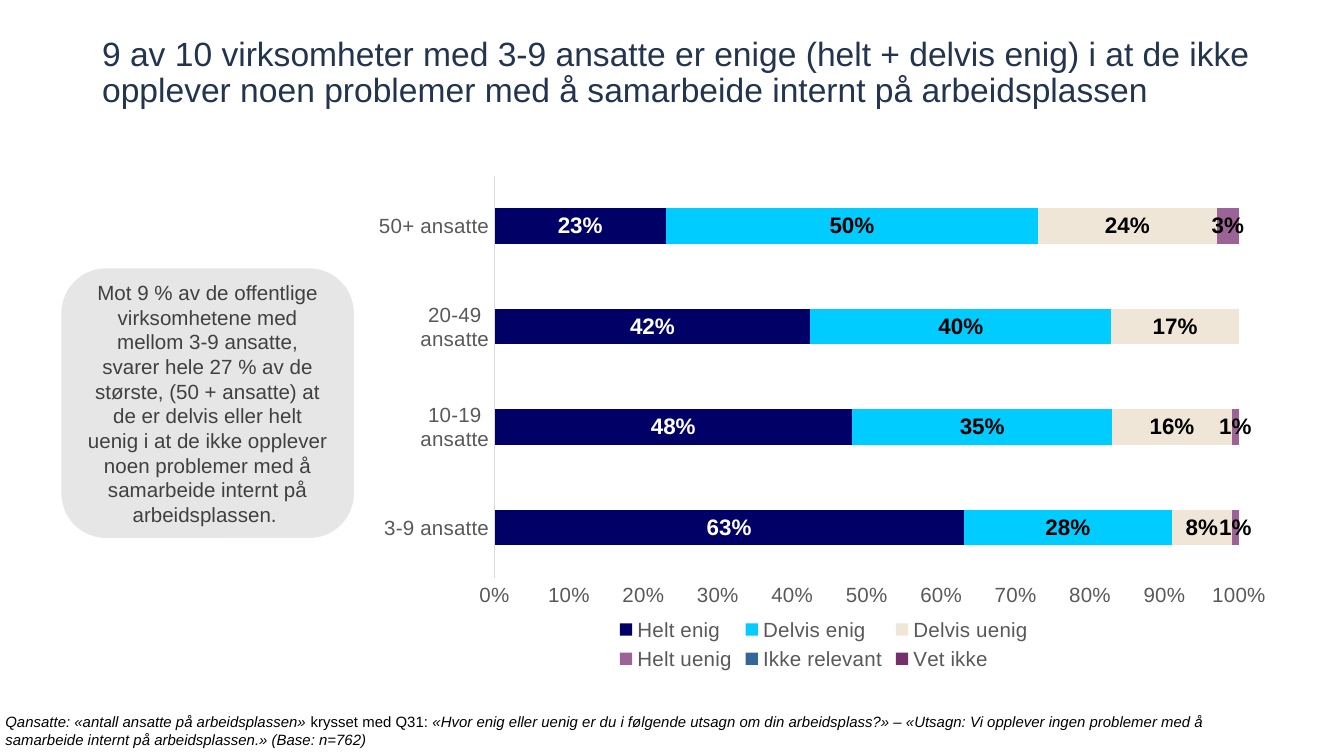
import pptx
import pptx.chart.data
import pptx.dml.color
import pptx.enum.chart
import pptx.enum.shapes
import pptx.enum.text
import pptx.oxml
import pptx.oxml.ns
import pptx.util

Inches = pptx.util.Inches
Pt = pptx.util.Pt
FONT = "Arial"
COLORS = {
    "title": "23344F", "black": "000000", "white": "FFFFFF", "callout": "E7E6E6",
    "callout_text": "404040", "axis_text": "595959", "axis_line": "D9D9D9",
}

TITLE = ("9 av 10 virksomheter med 3-9 ansatte er enige (helt + delvis enig) i at de ikke "
         "opplever noen problemer med å samarbeide internt på arbeidsplassen")
CALLOUT = ("Mot 9 % av de offentlige virksomhetene med mellom 3-9 ansatte, svarer hele 27 % av de "
           "største, (50 + ansatte) at de er delvis eller helt uenig i at de ikke opplever noen "
           "problemer med å samarbeide internt på arbeidsplassen. ")
# (text, italic)
SOURCE_NOTE = [
    ("Qansatte: «antall ansatte på arbeidsplassen» ", True),
    ("krysset med Q31: ", False),
    ("«Hvor enig eller uenig er du i følgende utsagn om din arbeidsplass?» – «Utsagn: Vi opplever "
     "ingen problemer med å samarbeide internt på arbeidsplassen.» (Base: n=762)", True),
]
COMPANY_SIZES = ["3-9 ansatte", "10-19 ansatte", "20-49 ansatte", "50+ ansatte"]
# (name, shares, fill, label colour or None for no labels)
ANSWERS = [
    ("Helt enig", [0.63, 0.48, 0.42, 0.23], "000066", "white"),
    ("Delvis enig", [0.28, 0.35, 0.40, 0.50], "00CCFF", "black"),
    ("Delvis uenig", [0.08, 0.16, 0.17, 0.24], "F0E6D8", "black"),
    ("Helt uenig", [0.01, 0.01, 0, 0.03], "9B6396", "black"),
    ("Ikke relevant", [0, 0, 0, 0], "336699", None),
    ("Vet ikke", [0, 0, 0, 0], "743068", None),
]
# Left, top, width and height in inches; the plot area is measured inside the chart.
CHART_BOX = (2.74, 0.88, 6.78, 4.15)
PLOT_BOX = (0.94, 0.43, 5.54, 2.99)


def rgb(value):
    return pptx.dml.color.RGBColor.from_string(value)


def format_font(font, size, color, bold=False, italic=False):
    font.name = FONT
    font.size = Pt(size)
    font.bold = bold
    font.italic = italic
    font.color.rgb = rgb(COLORS[color])


def write_text(frame, spans, size, color, anchor="TOP", align="LEFT", spacing=None, inset=None):
    """Fill a text frame with one paragraph of (text, italic) spans."""
    frame.word_wrap = True
    frame.vertical_anchor = getattr(pptx.enum.text.MSO_ANCHOR, anchor)
    if inset is not None:
        frame.margin_left = frame.margin_right = Inches(inset)
        frame.margin_top = frame.margin_bottom = Inches(inset)
    para = frame.paragraphs[0]
    para.alignment = getattr(pptx.enum.text.PP_ALIGN, align)
    para.line_spacing = spacing
    for text, italic in spans:
        span = para.add_run()
        span.text = text
        format_font(span.font, size, color, italic=italic)


def chart_xml(body):
    return pptx.oxml.parse_xml(body.replace(">", f" {pptx.oxml.ns.nsdecls('c')}>", 1))


def place_plot_area(chart):
    area = chart.plots[0]._element.getparent()
    for old in area.findall(pptx.oxml.ns.qn("c:layout")):
        area.remove(old)
    modes = "".join(f'<c:{side}Mode val="edge"/>' for side in "xy")
    chart_size = CHART_BOX[2:] * 2
    sizes = "".join(f'<c:{key} val="{length / whole}"/>'
                    for key, length, whole in zip("xywh", PLOT_BOX, chart_size))
    area.insert(0, chart_xml('<c:layout><c:manualLayout><c:layoutTarget val="inner"/>'
                             f"{modes}{sizes}</c:manualLayout></c:layout>"))


def label_series(series, shares, color):
    """Show centred percentages, leaving out the zero shares."""
    labels = series.data_labels
    labels.show_value = True
    labels.number_format = "0%"
    labels.number_format_is_linked = False
    labels.position = pptx.enum.chart.XL_LABEL_POSITION.CENTER
    format_font(labels.font, 12, color, bold=True)
    zeros = [index for index, share in enumerate(shares) if share == 0]
    for position, index in enumerate(zeros):
        hidden = f'<c:dLbl><c:idx val="{index}"/><c:delete val="1"/></c:dLbl>'
        labels._element.insert(position, chart_xml(hidden))


def add_answer_chart(page):
    data = pptx.chart.data.CategoryChartData(number_format="0%")
    data.categories = COMPANY_SIZES
    for name, shares, _, _ in ANSWERS:
        data.add_series(name, shares)
    chart = page.shapes.add_chart(pptx.enum.chart.XL_CHART_TYPE.BAR_STACKED_100,
                                  *map(Inches, CHART_BOX), data).chart
    format_font(chart.font, 10, "black")
    chart.has_title = False
    chart.has_legend = True
    chart.legend.position = pptx.enum.chart.XL_LEGEND_POSITION.BOTTOM
    chart.legend.include_in_layout = False
    format_font(chart.legend.font, 11, "axis_text")

    for axis in (chart.category_axis, chart.value_axis):
        axis.major_tick_mark = axis.minor_tick_mark = pptx.enum.chart.XL_TICK_MARK.NONE
        axis.has_major_gridlines = False
        format_font(axis.tick_labels.font, 11, "axis_text")
    chart.category_axis.format.line.color.rgb = rgb(COLORS["axis_line"])
    chart.category_axis.format.line.width = Pt(0.75)
    chart.value_axis.format.line.fill.background()
    chart.value_axis.maximum_scale = 1
    chart.value_axis.major_unit = 0.1
    chart.value_axis.tick_labels.number_format = "0%"
    chart.value_axis.tick_labels.number_format_is_linked = False

    plot = chart.plots[0]
    plot.gap_width = 182
    plot.overlap = 100
    plot.vary_by_categories = False
    for series, (_, shares, fill, label_color) in zip(plot.series, ANSWERS):
        series.format.fill.solid()
        series.format.fill.fore_color.rgb = rgb(fill)
        series.invert_if_negative = False
        if label_color:
            label_series(series, shares, label_color)
    place_plot_area(chart)


def add_callout(page):
    box = page.shapes.add_shape(pptx.enum.shapes.MSO_SHAPE.ROUNDED_RECTANGLE,
                                Inches(0.45), Inches(1.99), Inches(2.19), Inches(2.02))
    box.shadow.inherit = False
    box.fill.solid()
    box.fill.fore_color.rgb = rgb(COLORS["callout"])
    box.line.color.rgb = rgb(COLORS["white"])
    box.line.width = Pt(1)
    write_text(box.text_frame, [(CALLOUT, False)], 11, "callout_text",
               anchor="MIDDLE", align="CENTER")


def main():
    deck = pptx.Presentation()
    deck.slide_width = Inches(10)
    deck.slide_height = deck.slide_width * 9 // 16
    page = deck.slides.add_slide(deck.slide_layouts[6])

    title = page.shapes.add_textbox(Inches(0.76), Inches(0.49), Inches(8.6), Inches(0.33))
    write_text(title.text_frame, [(TITLE, False)], 18, "title",
               anchor="BOTTOM", spacing=0.9, inset=0)
    note = page.shapes.add_textbox(Inches(0.04), Inches(5.3), Inches(9), Inches(0.27))
    write_text(note.text_frame, SOURCE_NOTE, 8, "black", inset=0)
    add_answer_chart(page)
    add_callout(page)
    deck.save("out.pptx")


if __name__ == "__main__":
    main()
